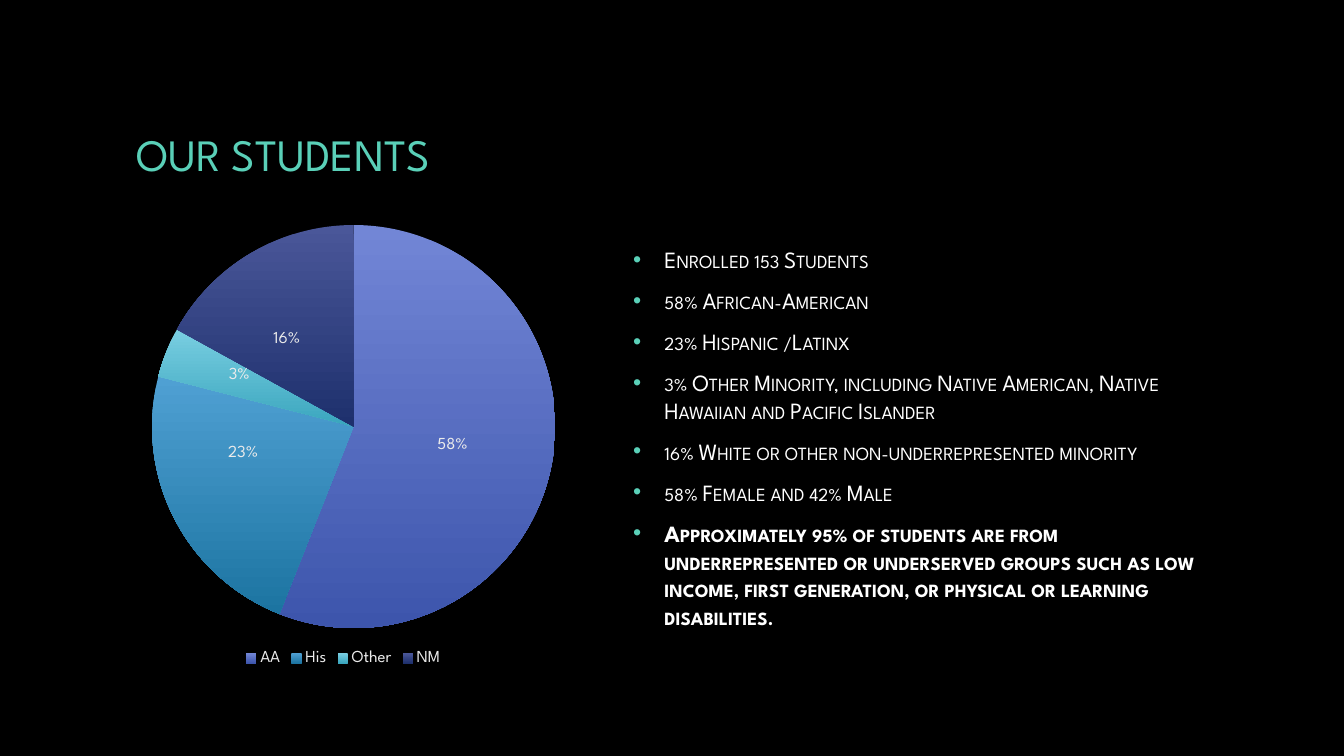
from pptx import Presentation
from pptx.chart.data import CategoryChartData
from pptx.dml.color import RGBColor
from pptx.enum.chart import XL_CHART_TYPE, XL_LABEL_POSITION as POS, XL_LEGEND_POSITION as LEG
from pptx.enum.text import MSO_ANCHOR, MSO_AUTO_SIZE, PP_ALIGN
from pptx.oxml import parse_xml
from pptx.oxml.ns import nsdecls
from pptx.util import Inches, Pt


def style(font, color, **values):
    values = {"name": "League Spartan", **values}
    for key, val in values.items():
        setattr(font, key, val)
    font.color.rgb = RGBColor.from_string(color)


def layout(x, y, **more):
    """Return a manual chart layout in fractions of the chart's size."""
    values = {**more, "x": x, "y": y}
    keys = ("layoutTarget", "xMode", "yMode", "x", "y", "w", "h")
    tags = "".join(f'<c:{k} val="{values[k]}"/>' for k in keys if k in values)
    return parse_xml(f'<c:layout {nsdecls("c")}><c:manualLayout>{tags}'
                     '</c:manualLayout></c:layout>')


MINT, WHITE, PALE = "5AD0B8", "FFFFFF", "EBEBEB"

prs = Presentation()
prs.slide_width, prs.slide_height = Inches(13.33), Inches(7.5)
slide = prs.slides.add_slide(prs.slide_layouts[1])
back = slide.background.fill
back.solid()
back.fore_color.rgb = RGBColor.from_string("000000")

# Title and body placeholders
title, body = slide.shapes.title, slide.placeholders[1]
for box, place in ((title, (1.25, 0.48, 10.83, 2.08)), (body, (6.18, 2.05, 6, 4.59))):
    box.left, box.top, box.width, box.height = map(Inches, place)
    frame = box.text_frame
    frame.word_wrap = True
    frame.auto_size = MSO_AUTO_SIZE.NONE
    frame.vertical_anchor = MSO_ANCHOR.MIDDLE

head = title.text_frame.paragraphs[0]
head.alignment = PP_ALIGN.LEFT
run = head.add_run()
run.text = "OUR STUDENTS"
style(run.font, MINT, size=Pt(32))

# Bulleted facts
facts = [
    "Enrolled 153 Students",
    "58% African-American",
    "23% Hispanic /Latinx",
    "3% Other Minority, including Native American, Native Hawaiian and Pacific Islander",
    "16% White or other non-underrepresented minority",
    "58% Female and 42% Male",
    "Approximately 95% of students are from underrepresented or underserved groups "
    "such as low income, first generation, or physical or learning disabilities.",
]
frame = body.text_frame
for i, fact in enumerate(facts):
    para = frame.add_paragraph() if i else frame.paragraphs[0]
    para.space_before, para.space_after = Pt(3.3 if i else 0), Pt(6)
    props = para._p.get_or_add_pPr()
    props.set("marL", str(Inches(0.31)))
    props.set("indent", str(Inches(-0.31)))
    props.append(parse_xml(f'<a:buClr {nsdecls("a")}><a:srgbClr val="{MINT}"/></a:buClr>'))
    props.append(parse_xml(f'<a:buChar {nsdecls("a")} char="•"/>'))
    run = para.add_run()
    run.text = fact
    style(run.font, WHITE, size=Pt(16.6), bold=fact == facts[-1])
    run._r.get_or_add_rPr().set("cap", "small")

# Pie: name, value, label, label shift, gradient
slices = [
    ("AA", 56, "58%", (0, 0), ("7286D6", "3D55AC")),
    ("His", 23, "23%", (-0.04, -0.04), ("4FA0D3", "1C74A1")),
    ("Other", 4, "3%", (-0.04, -0.03), ("79CEE1", "3AA6BE")),
    ("NM", 17, "16%", (-0.03, 0), ("4A5799", "1E306D")),
]
data = CategoryChartData()
data.categories = [s[0] for s in slices]
data.add_series("Series 1", [s[1] for s in slices])
place = map(Inches, (0.84, 2, 5.13, 4.65))
chart = slide.shapes.add_chart(XL_CHART_TYPE.PIE, *place, data).chart
style(chart.font, WHITE, size=Pt(10))
chart.has_title = False
chart.has_legend = True
legend = chart.legend
legend.position, legend.include_in_layout = LEG.BOTTOM, False
style(legend.font, PALE, size=Pt(12))

plot = chart.plots[0]
plot.vary_by_categories = True
area = plot._element.getparent()
for old in area.xpath("c:layout"):
    area.remove(old)
area.insert(0, layout(0.13, 0.05, w=0.78, h=0.86, layoutTarget="inner",
                      xMode="edge", yMode="edge"))

series = plot.series[0]
for i, (name, val, text, shift, shades) in enumerate(slices):
    point = series.points[i]
    fill = point.format.fill
    fill.gradient()
    fill.gradient_angle = 270
    for stop, shade, spot in zip(fill.gradient_stops, shades, (0, 1)):
        stop.color.rgb = RGBColor.from_string(shade)
        stop.position = spot
    point.format.line.fill.background()
    label = point.data_label
    run = label.text_frame.paragraphs[0].add_run()
    run.text = text
    style(run.font, PALE, size=Pt(12))
    label.position = POS.CENTER
    if any(shift):
        tag = series._element.xpath(f"c:dLbls/c:dLbl[c:idx/@val={i}]")[0]
        tag.insert(1, layout(*shift))

prs.save("out.pptx")
